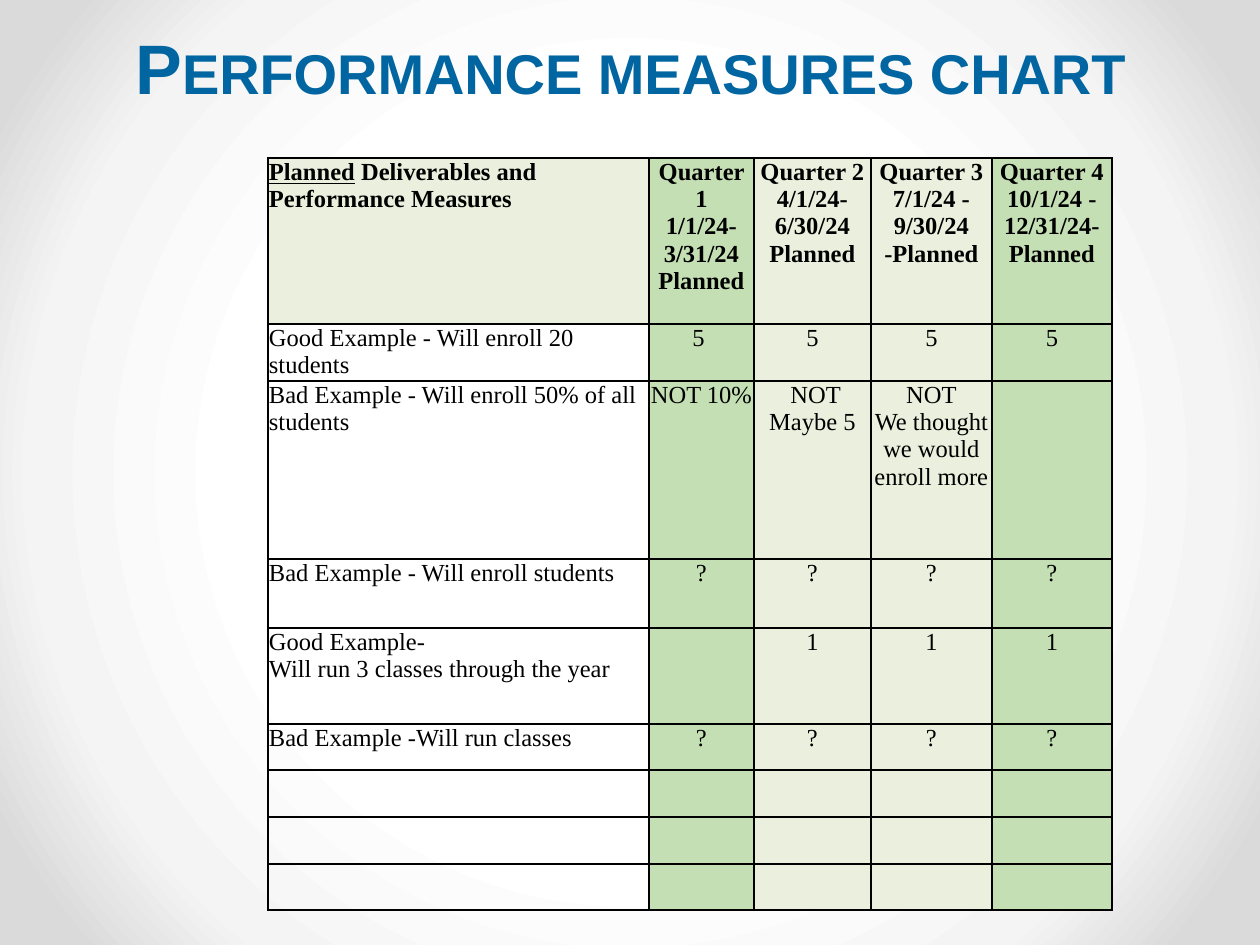
from lxml import etree
from pptx import Presentation
from pptx.dml.color import RGBColor
from pptx.enum.text import MSO_ANCHOR, MSO_AUTO_SIZE, PP_ALIGN
from pptx.oxml import parse_xml
from pptx.oxml.ns import nsdecls, qn
from pptx.util import Pt

LEFT, MID = PP_ALIGN.LEFT, PP_ALIGN.CENTER
PX = 914400 // 126
THEME = {
    "blue": "0065A0", "ink": "000000", "pale": "EAF0DD", "green": "C5DFB4",
    "glow": [(50, "FFFFFF"), (76, "F4F4F4"), (92, "DADADA")],
    "head": {"name": "Arial", "size": Pt(40), "bold": True},
    "body": {"name": "Times New Roman", "size": Pt(14)},
}
COLS = [381, 105, 117, 121, 120]
ROWS = [166, 57, 178, 69, 96, 46, 47, 47, 46]
FILLS = [None, "green", "pale", "pale", "green"]
# Each line of a cell is a paragraph.
TEXT = [
    ["Planned Deliverables and Performance Measures",
     "Quarter 1\n1/1/24-3/31/24\nPlanned",
     "Quarter 2\n4/1/24-6/30/24\nPlanned",
     "Quarter 3\n7/1/24 - 9/30/24 -Planned",
     "Quarter 4\n10/1/24 - 12/31/24-Planned"],
    ["Good Example - Will enroll 20 students", "5 ", "5", "5", "5"],
    ["Bad Example - Will enroll 50% of all students",
     "NOT 10% ", " NOT Maybe 5",
     "NOT\nWe thought we would enroll more", ""],
    ["Bad Example - Will enroll students"] + ["?"] * 4,
    ["Good Example-\nWill run 3 classes through the year", "", "1", "1", "1"],
    ["Bad Example -Will run classes"] + ["?"] * 4,
]


def style(run, form, color):
    for key, val in form.items():
        setattr(run.font, key, val)
    run.font.color.rgb = RGBColor.from_string(THEME[color])


def edge(cell):
    """Draw a thin black line on all four sides of the cell."""
    props = cell._tc.get_or_add_tcPr()
    for i, side in enumerate("LRTB"):
        props.insert(i, parse_xml(
            f'<a:ln{side} {nsdecls("a")} w="12700"><a:solidFill>'
            f'<a:srgbClr val="{THEME["ink"]}"/></a:solidFill></a:ln{side}>'))


prs = Presentation()
prs.slide_width, prs.slide_height = 1260 * PX, 945 * PX
slide = prs.slides.add_slide(prs.slide_layouts[5])

# Background: a round glow from the centre
slide.background.fill.solid()
back = slide.element.find(".//" + qn("p:bgPr"))
stops = "".join(f'<a:gs pos="{pos * 1000}"><a:srgbClr val="{hue}"/></a:gs>'
                for pos, hue in THEME["glow"])
glow = parse_xml(
    f'<a:gradFill {nsdecls("a")} rotWithShape="1"><a:gsLst>{stops}</a:gsLst>'
    '<a:path path="circle"><a:fillToRect l="50000" t="50000" r="50000" '
    'b="50000"/></a:path></a:gradFill>')
back.replace(back.find(qn("a:solidFill")), glow)
if back.find(qn("a:effectLst")) is None:
    etree.SubElement(back, qn("a:effectLst"))

# Title
title = slide.shapes.title
title.left, title.top, title.width, title.height = (
    n * PX for n in (64, 10, 1133, 105))
frame = title.text_frame
frame.text = "Performance measures chart"
frame.word_wrap = True
frame.auto_size = MSO_AUTO_SIZE.NONE
frame.vertical_anchor = MSO_ANCHOR.BOTTOM
frame.paragraphs[0].alignment = MID
run = frame.paragraphs[0].runs[0]
style(run, THEME["head"], "blue")
run.font._element.set("cap", "small")

# Table of planned measures by quarter
table = slide.shapes.add_table(
    len(ROWS), len(COLS), 268 * PX, 158 * PX,
    sum(COLS) * PX, sum(ROWS) * PX).table
table.first_row = table.horz_banding = False
for col, wide in zip(table.columns, COLS):
    col.width = wide * PX
for row, high in zip(table.rows, ROWS):
    row.height = high * PX

for r in range(len(ROWS)):
    for c, hue in enumerate(FILLS):
        cell = table.cell(r, c)
        for side in ("left", "right", "top", "bottom"):
            setattr(cell, "margin_" + side, PX)
        if r == 0 and c == 0:
            hue = "pale"
        if hue:
            cell.fill.solid()
            cell.fill.fore_color.rgb = RGBColor.from_string(THEME[hue])
        else:
            cell.fill.background()
        edge(cell)
        if r >= len(TEXT) or not TEXT[r][c]:
            continue
        cell.text = TEXT[r][c]
        for para in cell.text_frame.paragraphs:
            para.alignment = MID if c else LEFT
            for run in para.runs:
                style(run, THEME["body"] | {"bold": r == 0}, "ink")

# Only the first word of the header is underlined
para = table.cell(0, 0).text_frame.paragraphs[0]
first = para.runs[0]
word, rest = first.text.split(" ", 1)
first.text = word
first.font.underline = True
tail = para.add_run()
tail.text = " " + rest
style(tail, THEME["body"] | {"bold": True}, "ink")

prs.save("out.pptx")
